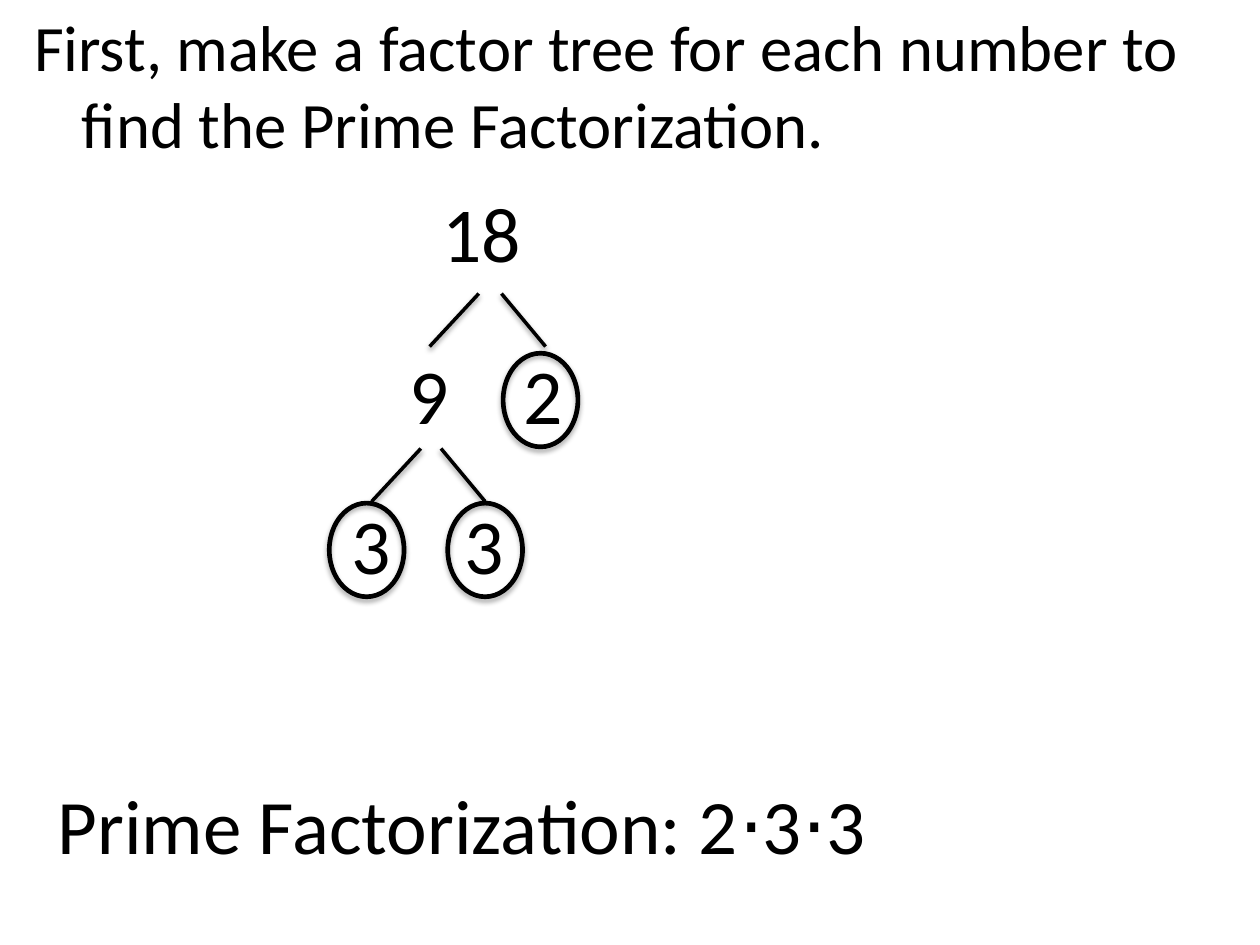
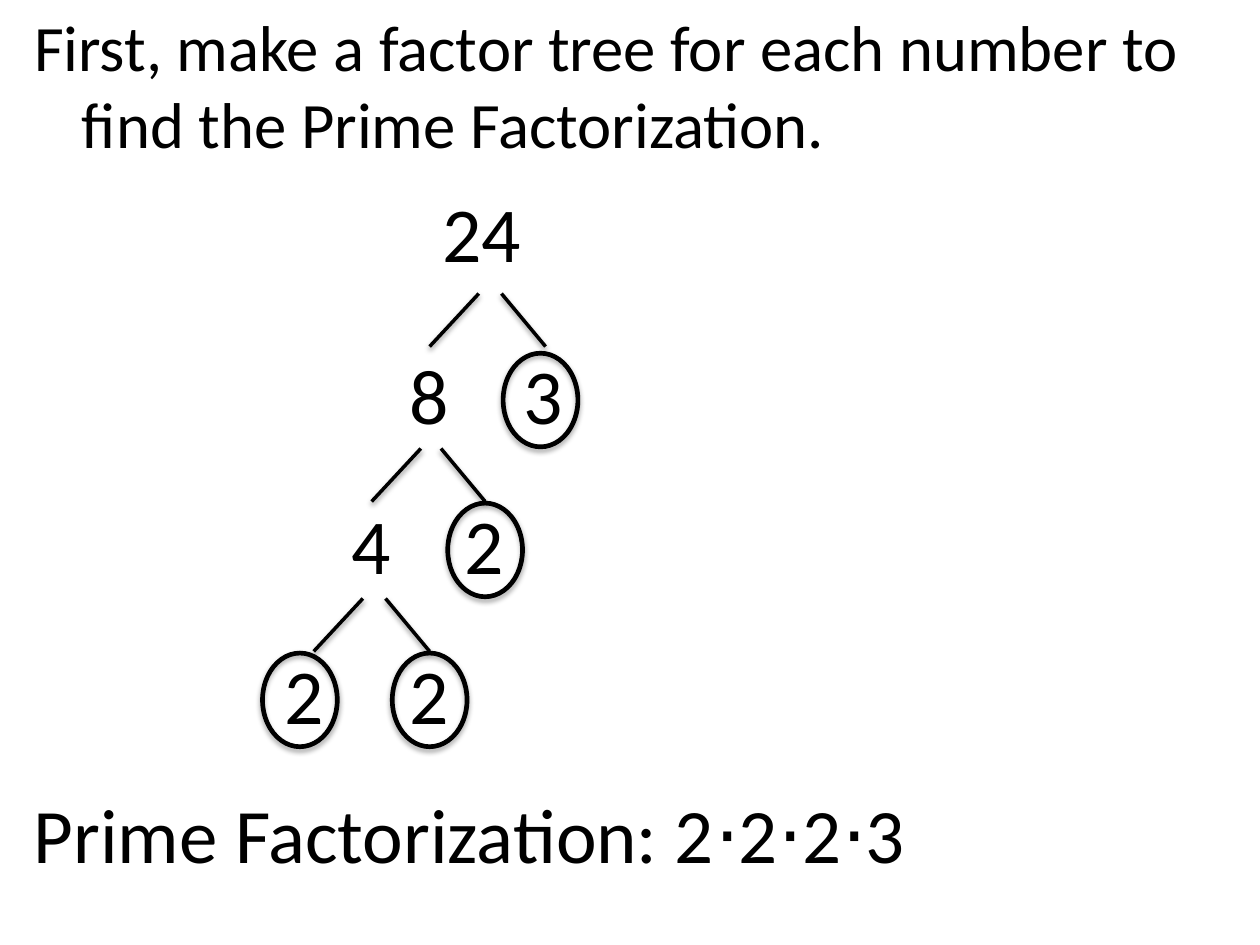
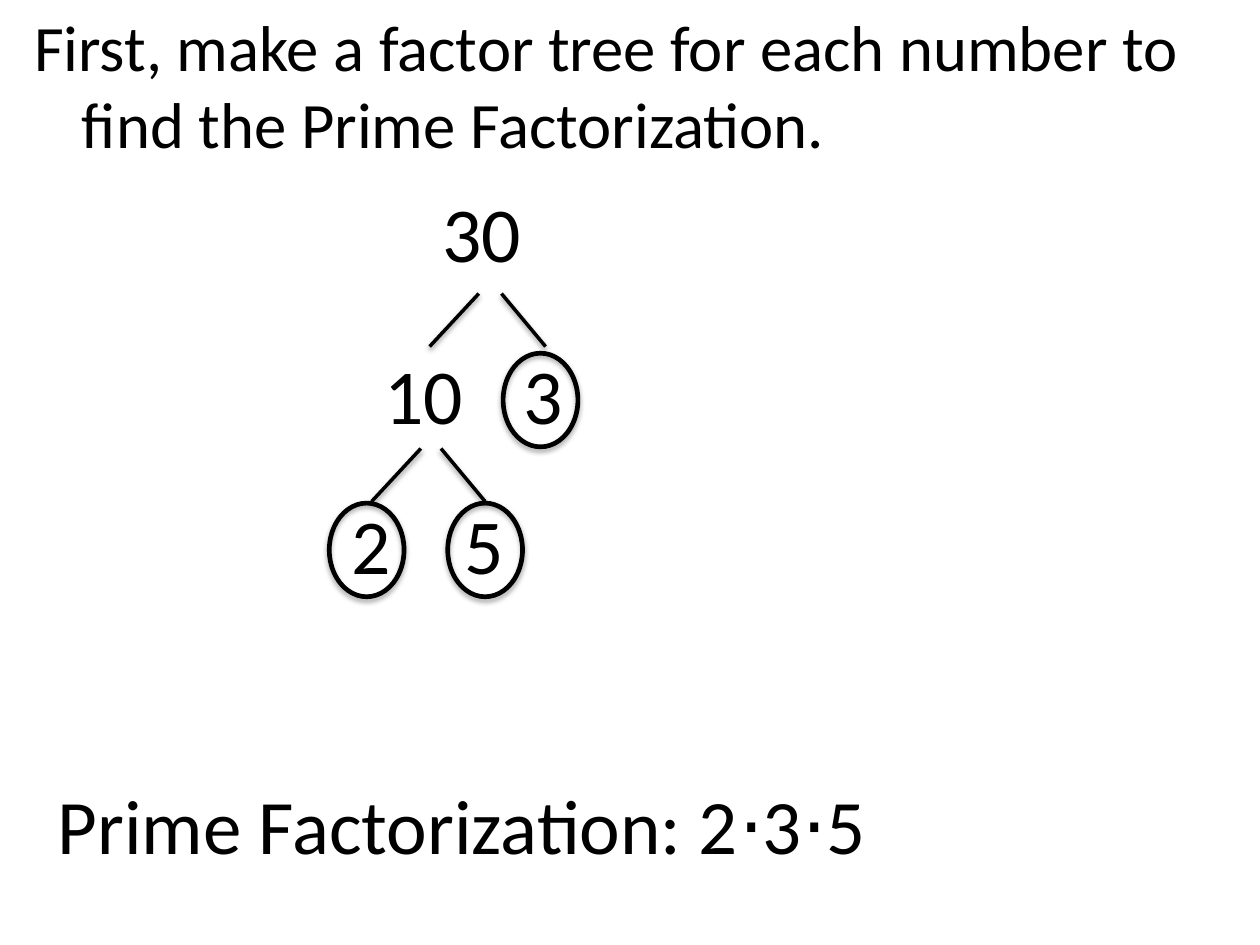
from dataclasses import dataclass

from lxml import etree
from pptx import Presentation
from pptx import util as u
from pptx.dml.color import RGBColor
from pptx.enum import shapes, text
from pptx.oxml import ns

BLACK = RGBColor(0x00, 0x00, 0x00)
FONT = "Calibri"
HEADING = "First, make a factor tree for each number to find the Prime Factorization."
HEADING_SIZE, NUMBER_SIZE, ANSWER_SIZE = 37, 44.4, 44
LINE_WIDTH, LINE_HEIGHT = 10, 1.58
NUMBER_HEIGHT = 0.77
ROOT_LEFT, ROOT_TOP, ROOT_WIDTH = 3.41, 1.5, 1.29
DIGIT_WIDTH, TWO_DIGIT_WIDTH, TWO_DIGIT_SHIFT = 0.53, 0.99, 0.2
RING_WIDTH, RING_THICKNESS = 0.62, 0.043
BRANCH_DROP, LEFT_REACH, RIGHT_REACH = 0.42, -0.39, 0.35


@dataclass(frozen=True)
class Place:
    """Where one factor goes: the start of its branch, its number and its ring."""
    branch_left: float
    number_left: float
    ring_left: float


@dataclass(frozen=True)
class Level:
    branch_top: float
    number_top: float
    left: Place
    right: Place


@dataclass(frozen=True)
class FactorTree:
    number: int
    splits: list[tuple[int, int]]
    answer_left: float
    answer_top: float


LEVELS = [
    Level(2.33, 2.79, Place(3.8, 3.15, 3.06), Place(3.98, 4.06, 3.98)),
    Level(3.56, 3.98, Place(3.34, 2.69, 2.6), Place(3.5, 3.59, 3.54)),
    Level(4.75, 5.17, Place(2.88, 2.16, 2.07), Place(3.06, 3.15, 3.1)),
]

TREES = [
    FactorTree(18, [(9, 2), (3, 3)], 0.36, 6.12),
    FactorTree(24, [(8, 3), (4, 2), (2, 2)], 0.17, 6.19),
    FactorTree(30, [(10, 3), (2, 5)], 0.36, 6.12),
]


def is_prime(number: int) -> bool:
    return number > 1 and all(number % divisor for divisor in range(2, number))


def add_shadow(shape, opacity: int, distance: float) -> None:
    """Give the shape a soft shadow straight below it."""
    effects = etree.SubElement(shape._element.spPr, ns.qn("a:effectLst"))
    shadow = etree.SubElement(
        effects, ns.qn("a:outerShdw"), blurRad=str(u.Pt(3.1)),
        dist=str(u.Pt(distance)), dir="5400000", rotWithShape="0")
    color = etree.SubElement(shadow, ns.qn("a:srgbClr"), val=str(BLACK))
    etree.SubElement(color, ns.qn("a:alpha"), val=str(opacity * 1000))


def write(shape, words: str, size: float, line_spacing: float = 1.0) -> None:
    """Fill the shape with one hanging paragraph."""
    frame = shape.text_frame
    frame.word_wrap = True
    frame.auto_size = text.MSO_AUTO_SIZE.NONE
    frame.vertical_anchor = text.MSO_ANCHOR.TOP
    paragraph = frame.paragraphs[0]
    paragraph.alignment = text.PP_ALIGN.LEFT
    paragraph.line_spacing = line_spacing
    properties = paragraph._p.get_or_add_pPr()
    properties.set("marL", str(u.Inches(0.38)))
    properties.set("indent", str(u.Inches(-0.38)))
    space_before = etree.SubElement(properties, ns.qn("a:spcBef"))
    etree.SubElement(space_before, ns.qn("a:spcPct"), val="20000")
    run = paragraph.add_run()
    run.text = words
    run.font.name = FONT
    run.font.size = u.Pt(size)
    run.font.color.rgb = BLACK


def add_heading(slide) -> None:
    title = slide.shapes.title
    title.left, title.top = u.Inches(0.17), u.Inches(0)
    title.width, title.height = u.Inches(LINE_WIDTH), u.Inches(LINE_HEIGHT)
    write(title, HEADING, HEADING_SIZE)


def add_number(slide, number: int, left: float, top: float, width: float) -> None:
    box = slide.shapes.add_textbox(
        u.Inches(left), u.Inches(top), u.Inches(width), u.Inches(NUMBER_HEIGHT))
    write(box, str(number), NUMBER_SIZE, line_spacing=0.9)


def add_branch(slide, left: float, top: float, reach: float) -> None:
    branch = slide.shapes.add_connector(
        shapes.MSO_CONNECTOR.STRAIGHT, u.Inches(left), u.Inches(top),
        u.Inches(left + reach), u.Inches(top + BRANCH_DROP))
    branch.line.color.rgb = BLACK
    branch.line.width = u.Pt(2)
    add_shadow(branch, opacity=38, distance=1.6)


def add_prime_ring(slide, left: float, top: float) -> None:
    ring = slide.shapes.add_shape(
        shapes.MSO_SHAPE.DONUT, u.Inches(left), u.Inches(top),
        u.Inches(RING_WIDTH), u.Inches(NUMBER_HEIGHT))
    ring.adjustments[0] = RING_THICKNESS
    ring.fill.solid()
    ring.fill.fore_color.rgb = BLACK
    ring.line.color.rgb = BLACK
    ring.line.width = u.Pt(0.75)
    add_shadow(ring, opacity=35, distance=1.8)


def add_factor(slide, factor: int, place: Place, level: Level, reach: float) -> None:
    """Draw a branch and the factor at its end, ringed if it is prime."""
    add_branch(slide, place.branch_left, level.branch_top, reach)
    if factor < 10:
        add_number(slide, factor, place.number_left, level.number_top, DIGIT_WIDTH)
    else:
        add_number(slide, factor, place.number_left - TWO_DIGIT_SHIFT,
                   level.number_top, TWO_DIGIT_WIDTH)
    if is_prime(factor):
        add_prime_ring(slide, place.ring_left, level.number_top)


def add_answer(slide, tree: FactorTree) -> None:
    primes = sorted(factor for split in tree.splits for factor in split if is_prime(factor))
    box = slide.shapes.add_textbox(
        u.Inches(tree.answer_left), u.Inches(tree.answer_top),
        u.Inches(LINE_WIDTH), u.Inches(LINE_HEIGHT))
    write(box, "Prime Factorization: " + "⋅".join(map(str, primes)), ANSWER_SIZE)


def add_tree_slide(presentation, tree: FactorTree) -> None:
    title_only = presentation.slide_layouts.get_by_name("Title Only")
    slide = presentation.slides.add_slide(title_only)
    add_heading(slide)
    add_number(slide, tree.number, ROOT_LEFT, ROOT_TOP, ROOT_WIDTH)
    for level, (left_factor, right_factor) in zip(LEVELS, tree.splits):
        add_factor(slide, left_factor, level.left, level, LEFT_REACH)
        add_factor(slide, right_factor, level.right, level, RIGHT_REACH)
    add_answer(slide, tree)


def main() -> None:
    presentation = Presentation()
    presentation.slide_width = u.Inches(10)
    presentation.slide_height = u.Inches(7.5)
    for tree in TREES:
        add_tree_slide(presentation, tree)
    presentation.save("out.pptx")


if __name__ == "__main__":
    main()
